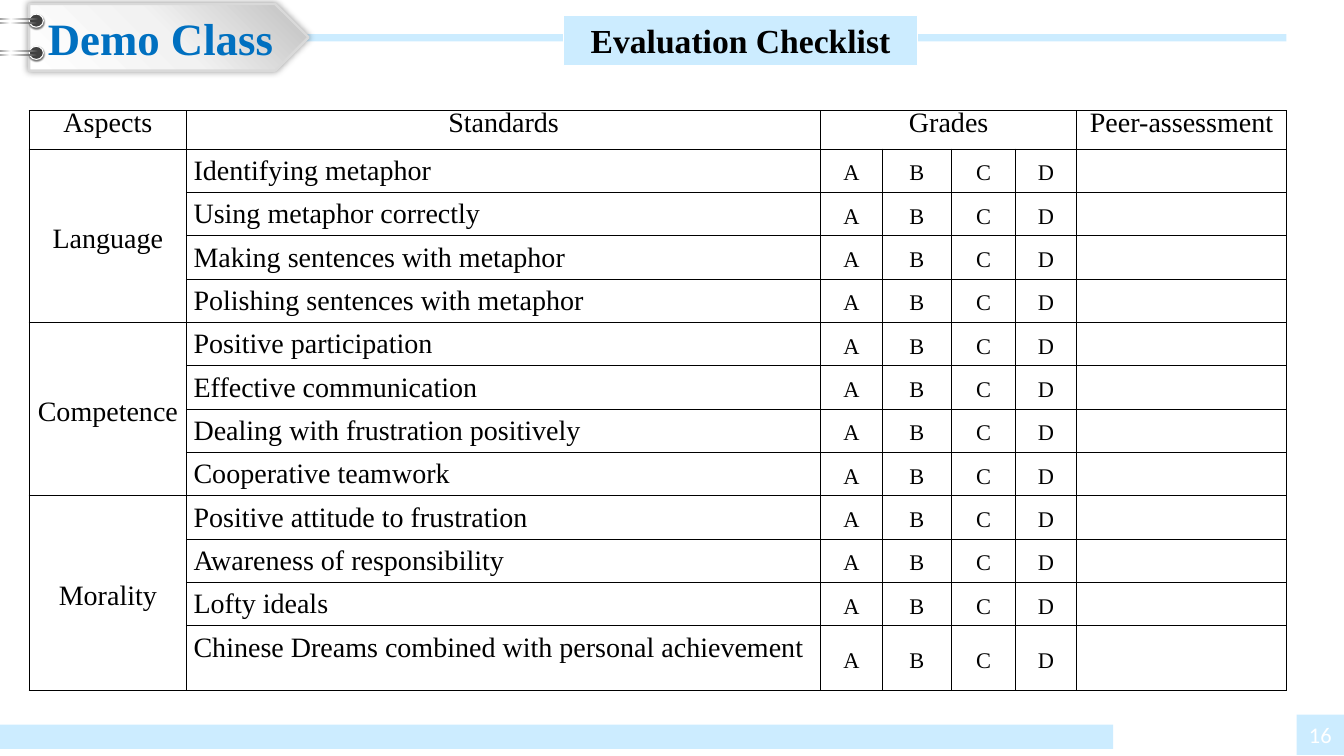
from lxml import etree
from pptx import Presentation
from pptx.dml.color import RGBColor
from pptx.enum.shapes import MSO_SHAPE as Shape
from pptx.enum.text import MSO_ANCHOR as Anchor, MSO_AUTO_SIZE as AutoSize, PP_ALIGN as Align
from pptx.oxml import parse_xml
from pptx.oxml.ns import nsdecls, qn
from pptx.util import Inches, Pt

SKY = RGBColor(0xCC, 0xEC, 0xFF)
BLUE = RGBColor(0x00, 0x70, 0xC0)
WHITE = RGBColor(0xFF, 0xFF, 0xFF)
BLACK = RGBColor(0x00, 0x00, 0x00)
LIGHT_GRAY = RGBColor(0xF2, 0xF2, 0xF2)
EDGE_GRAY = RGBColor(0xD9, 0xD9, 0xD9)
MID_GRAY = RGBColor(0xBF, 0xBF, 0xBF)
DARK_GRAY = RGBColor(0x40, 0x40, 0x40)
NEAR_BLACK = RGBColor(0x26, 0x26, 0x26)
SERIF = "Times New Roman"

COLUMNS = [1.56, 6.29, 0.61, 0.69, 0.63, 0.61, 2.08]
ROWS = [0.38] + [0.43] * 11 + [0.64]
HEADINGS = {0: "Aspects", 1: "Standards", 2: "Grades", 6: "Peer-assessment"}
ASPECTS = {
    "Language": [
        "Identifying metaphor",
        "Using metaphor correctly",
        "Making sentences with metaphor",
        "Polishing sentences with metaphor",
    ],
    "Competence": [
        "Positive participation",
        "Effective communication",
        "Dealing with frustration positively",
        "Cooperative teamwork",
    ],
    "Morality": [
        "Positive attitude to frustration",
        "Awareness of responsibility",
        "Lofty ideals",
        "Chinese Dreams combined with personal achievement",
    ],
}


def add_box(page, kind, left, top, width, height, fill=None, line=None, weight=0.75):
    """Add a preset shape with a plain fill and an optional outline."""
    box = page.shapes.add_shape(kind, Inches(left), Inches(top), Inches(width), Inches(height))
    box.shadow.inherit = False
    if fill is not None:
        box.fill.solid()
        box.fill.fore_color.rgb = fill
    if line is None:
        box.line.fill.background()
    else:
        box.line.color.rgb = line
        box.line.width = Pt(weight)
    return box


def set_gradient(box, stops, angle):
    """Fill a shape with a linear gradient of (position, colour) stops."""
    marks = "".join(
        f'<a:gs pos="{position * 1000}"><a:srgbClr val="{color}"/></a:gs>' for position, color in stops
    )
    gradient = parse_xml(
        f'<a:gradFill {nsdecls("a")} rotWithShape="1"><a:gsLst>{marks}</a:gsLst>'
        f'<a:lin ang="{angle * 60000}" scaled="0"/></a:gradFill>'
    )
    box._element.spPr.find(qn("a:prstGeom")).addnext(gradient)


def set_shadow(box, opacity, blur, distance, angle):
    """Give a shape a black outer shadow."""
    effects = box._element.spPr.find(qn("a:effectLst"))
    shadow = etree.SubElement(
        effects, qn("a:outerShdw"), blurRad=str(Pt(blur)), dist=str(Pt(distance)),
        dir=str(angle * 60000), algn="ctr", rotWithShape="0",
    )
    color = etree.SubElement(shadow, qn("a:srgbClr"), val=str(BLACK))
    etree.SubElement(color, qn("a:alpha"), val=str(opacity * 1000))


def write(frame, text, size, color=BLACK, bold=False, font=SERIF, align=Align.CENTER):
    """Write one formatted paragraph and return it."""
    frame.text = text
    para = frame.paragraphs[0]
    para.alignment = align
    for span in para.runs:
        span.font.name = font
        span.font.size = Pt(size)
        span.font.bold = bold
        span.font.color.rgb = color
    return para


def add_footer(page, top):
    """Place the bottom band and the page number box."""
    add_box(page, Shape.RECTANGLE, 0, top + 0.1, 11.04, 0.24, SKY)
    number = add_box(page, Shape.RECTANGLE, 12.86, top, 0.47, 0.4, SKY)
    frame = number.text_frame
    frame.margin_left = frame.margin_right = 0
    frame.vertical_anchor = Anchor.MIDDLE
    write(frame, "16", 16, WHITE, font="Calibri")


def add_binder_tag(page, left, top):
    """Place the arrow-shaped tag with its two binder rings."""
    tag = add_box(page, Shape.PENTAGON, left, top, 2.77, 0.66, line=EDGE_GRAY, weight=1.75)
    set_gradient(tag, [(0, WHITE), (50, LIGHT_GRAY), (100, MID_GRAY)], 315)
    set_shadow(tag, 40, 5, 0, 0)
    tag.text_frame.vertical_anchor = Anchor.MIDDLE
    write(tag.text_frame, "Demo Class", 32, BLUE, bold=True)
    ring_tops = [top + 0.1, top + 0.42]
    for ring_top in ring_tops:
        hole = add_box(page, Shape.OVAL, left, ring_top, 0.14, 0.13, DARK_GRAY, WHITE)
        set_shadow(hole, 55, 1, 1, 90)
    for ring_top in ring_tops:
        for shift, drop in ((0.42, 0.04), (0.43, 0.08)):
            wire = add_box(page, Shape.ROUNDED_RECTANGLE, left - shift, ring_top + drop, 0.51, 0.02)
            set_gradient(wire, [(0, DARK_GRAY), (53, WHITE), (100, NEAR_BLACK)], 180)


def add_title(page, left, top):
    """Place the title label over the top rail."""
    title = add_box(page, Shape.RECTANGLE, left, top, 3.51, 0.5, SKY, WHITE)
    frame = title.text_frame
    frame.word_wrap = True
    frame.auto_size = AutoSize.SHAPE_TO_FIT_TEXT
    frame.vertical_anchor = Anchor.BOTTOM
    write(frame, "Evaluation Checklist", 24, bold=True)


def style_cell(cell):
    """Clear a cell's fill and draw thin black borders around it."""
    cell.fill.background()
    cell.margin_left = cell.margin_right = Inches(0.07)
    cell.margin_top = cell.margin_bottom = 0
    cell.vertical_anchor = Anchor.MIDDLE
    properties = cell._tc.get_or_add_tcPr()
    for index, side in enumerate(("lnL", "lnR", "lnT", "lnB")):
        properties.insert(index, parse_xml(
            f'<a:{side} {nsdecls("a")} w="{Pt(1)}"><a:solidFill>'
            f'<a:srgbClr val="{BLACK}"/></a:solidFill></a:{side}>'
        ))


def add_checklist(page, left, top):
    """Place the evaluation table."""
    table = page.shapes.add_table(
        len(ROWS), len(COLUMNS), Inches(left), Inches(top), Inches(sum(COLUMNS)), Inches(sum(ROWS))
    ).table
    table.first_row = table.horz_banding = False
    for column, width in zip(table.columns, COLUMNS):
        column.width = Inches(width)
    for row, height in zip(table.rows, ROWS):
        row.height = Inches(height)
    for cell in table.iter_cells():
        style_cell(cell)

    table.cell(0, 2).merge(table.cell(0, 5))
    for column, heading in HEADINGS.items():
        write(table.cell(0, column).text_frame, heading, 20).line_spacing = Pt(12)

    first = 1
    for aspect, standards in ASPECTS.items():
        last = first + len(standards) - 1
        table.cell(first, 0).merge(table.cell(last, 0))
        write(table.cell(first, 0).text_frame, aspect, 20).line_spacing = 1.2
        for row, standard in enumerate(standards, first):
            cell = table.cell(row, 1)
            cell.vertical_anchor = Anchor.TOP
            write(cell.text_frame, standard, 20, align=Align.JUSTIFY).line_spacing = 1.2
            for column, grade in enumerate("ABCD", 2):
                write(table.cell(row, column).text_frame, grade, 16).line_spacing = 1.2
        first = last + 1


def main():
    """Build the evaluation slide and save it."""
    deck = Presentation()
    deck.slide_width = Inches(13.33)
    deck.slide_height = Inches(7.5)
    page = deck.slides.add_slide(deck.slide_layouts[6])
    add_footer(page, 7.09)
    add_box(page, Shape.RECTANGLE, 0.85, 0.34, 11.91, 0.07, SKY)
    add_binder_tag(page, 0.29, 0.04)
    add_checklist(page, 0.29, 1.1)
    add_title(page, 5.59, 0.15)
    deck.save("out.pptx")


if __name__ == "__main__":
    main()
